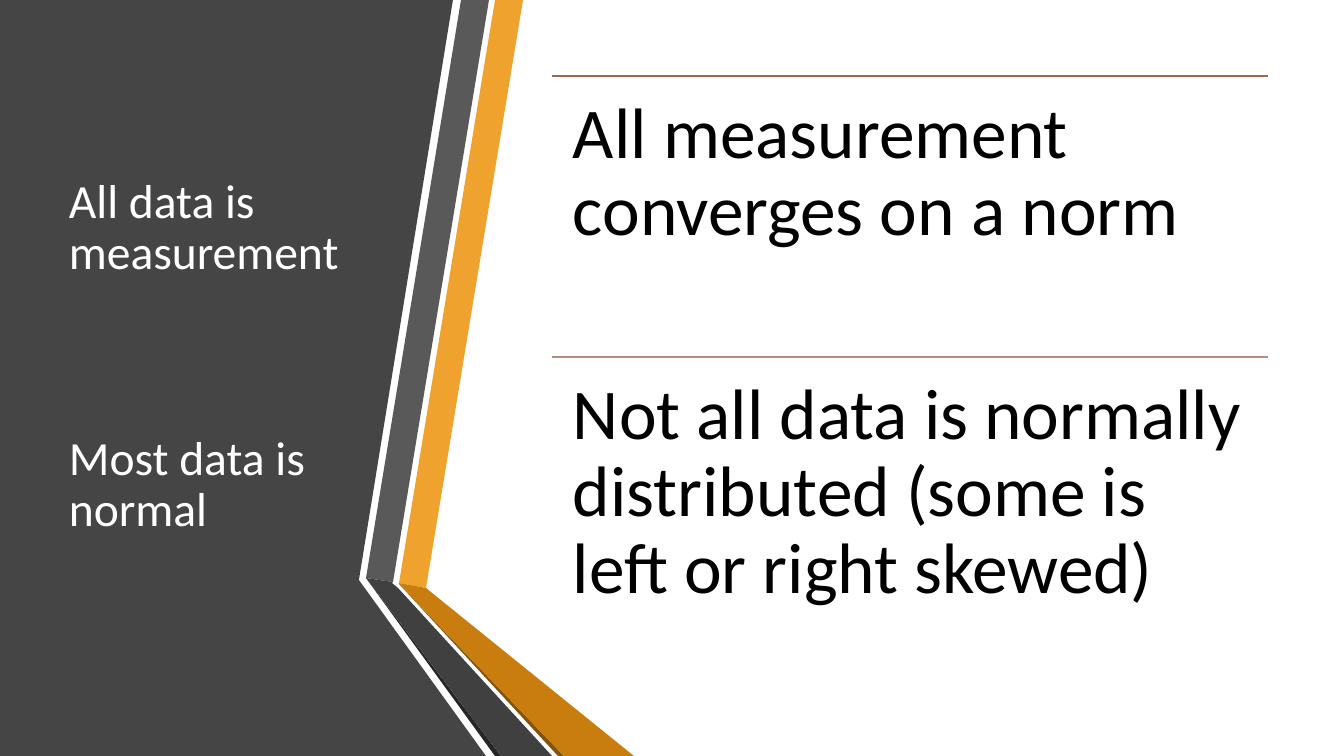
from pptx import Presentation
from pptx.dml.color import RGBColor
from pptx.enum.shapes import MSO_CONNECTOR
from pptx.enum.text import MSO_ANCHOR
from pptx.oxml.ns import qn
from pptx.util import Pt
from lxml.etree import SubElement

SCALE = 914400 / 100.8
WIDE, HIGH = 1344, 756
COLORS = {
    "panel": "454545", "amber": "F0A22E", "grey": "595959",
    "shade": "262626", "brown": "85540A", "ochre": "C87D0E",
    "coal": "404040", "rust": "A5644E", "rose": "B58B80",
    "white": "FFFFFF", "black": "000000",
}
BANDS = [
    ("panel", [(0, 0), (453, 0), (359, 580), (486, HIGH), (0, HIGH)]),
    ("amber", [(399, 583), (426, 588), (523, 0), (495, 0)]),
    ("grey", [(489, 0), (461, 0), (366, 578), (393, 582)]),
    ("shade", [(366, 578), (495, HIGH), (501, HIGH)]),
    ("brown", [(399, 584), (558, HIGH), (564, HIGH)]),
    ("ochre", [(399, 584), (564, HIGH), (634, HIGH), (426, 588), (399, 583)]),
    ("coal", [(552, HIGH), (398, 588), (392, 583), (393, 582), (366, 578), (501, HIGH)]),
]
CLAIMS = ["All data is measurement", "Most data is normal"]
REPLIES = [
    ("rust", "All measurement converges on a norm"),
    ("rose", "Not all data is normally distributed (some is left or right skewed)"),
]
LEFT, TOP, WIDTH, STEP = 552, 76, 716, 281


def px(size):
    return round(size * SCALE)


def color(name):
    return RGBColor.from_string(COLORS[name])


def apply(target, values):
    for name, value in values.items():
        setattr(target, name, value)


class Painter:
    def __init__(self, slide, font):
        self.slide = slide
        self.font = font

    def band(self, fill, points):
        maker = self.slide.shapes.build_freeform(*points[0], scale=SCALE)
        maker.add_line_segments(points[1:], close=True)
        shape = maker.convert_to_shape()
        shape.shadow.inherit = False
        shape.fill.solid()
        shape.fill.fore_color.rgb = color(fill)
        shape.line.fill.background()

    def rule(self, ink, left, top, width):
        line = self.slide.shapes.add_connector(
            MSO_CONNECTOR.STRAIGHT, px(left), px(top), px(left + width), px(top))
        line.line.color.rgb = color(ink)
        line.line.width = Pt(1)
        SubElement(line._element.spPr, qn("a:effectLst"))

    def text(self, lines, area, size, ink, frame, gap=0):
        box = self.slide.shapes.add_textbox(*map(px, area)).text_frame
        apply(box, {"word_wrap": True, **frame})
        for index, line in enumerate(lines):
            para = box.paragraphs[0] if index == 0 else box.add_paragraph()
            apply(para, {"line_spacing": 0.9, "space_before": Pt(gap if index else 0)})
            run = para.add_run()
            run.text = line
            apply(run.font, {"name": self.font, "size": Pt(size)})
            run.font.color.rgb = color(ink)


def main():
    deck = Presentation()
    apply(deck, {"slide_width": px(WIDE), "slide_height": px(HIGH)})
    paint = Painter(deck.slides.add_slide(deck.slide_layouts[6]), "Calibri")
    for fill, points in BANDS:
        paint.band(fill, points)
    paint.text(CLAIMS, (59, TOP, 307, 2 * STEP), 34, "white",
               {"vertical_anchor": MSO_ANCHOR.MIDDLE}, gap=110)
    sides = ("left", "top", "right", "bottom")
    inset = {f"margin_{side}": px(21) for side in sides}
    for index, (ink, reply) in enumerate(REPLIES):
        top = TOP + index * STEP
        paint.rule(ink, LEFT, top, WIDTH)
        paint.text([reply], (LEFT, top, WIDTH, STEP), 51, "black", inset)
    deck.save("out.pptx")


if __name__ == "__main__":
    main()
